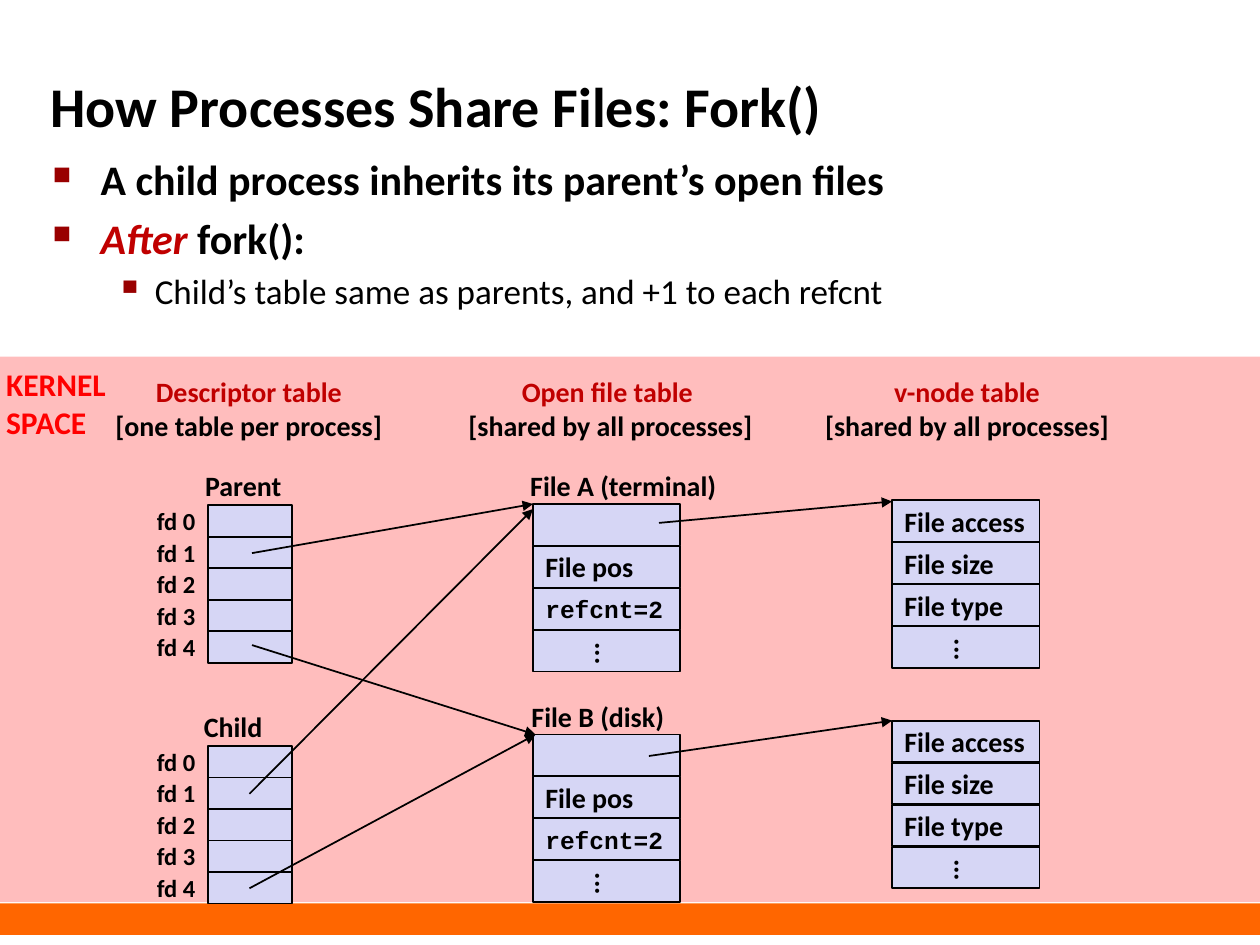
from lxml.etree import SubElement
from pptx import Presentation
from pptx.dml.color import RGBColor
from pptx.enum.shapes import MSO_CONNECTOR, MSO_SHAPE
from pptx.enum.text import MSO_ANCHOR, MSO_AUTO_SIZE, PP_ALIGN
from pptx.oxml.ns import qn
from pptx.util import Inches, Pt

BLACK = RGBColor(0x00, 0x00, 0x00)
ORANGE = RGBColor(0xFF, 0x66, 0x00)
RED = RGBColor(0xFF, 0x00, 0x00)
DARK_RED = RGBColor(0xC0, 0x00, 0x00)
BULLET_RED = RGBColor(0x99, 0x00, 0x00)
LAVENDER = RGBColor(0xD6, 0xD6, 0xF5)

prs = Presentation()
prs.slide_width, prs.slide_height = Inches(10), Inches(7.5)
slide = prs.slides.add_slide(prs.slide_layouts[6])


def add_box(left, top, width, height, fill, outlined=True):
    box = slide.shapes.add_shape(MSO_SHAPE.RECTANGLE, Inches(left), Inches(top),
                                 Inches(width), Inches(height))
    box.shadow.inherit = False
    box.fill.solid()
    box.fill.fore_color.rgb = fill
    if outlined:
        box.line.color.rgb = BLACK
        box.line.width = Pt(1)
    else:
        box.line.fill.background()
    return box


def write(shape, lines, size=16, colors=(BLACK,), font="Calibri",
          align=PP_ALIGN.LEFT, wrap=False, grow=False):
    """Fill a shape with bold, vertically centred lines, one color per line."""
    frame = shape.text_frame
    frame.text = "\n".join(lines)
    frame.word_wrap = wrap
    frame.vertical_anchor = MSO_ANCHOR.MIDDLE
    frame.auto_size = MSO_AUTO_SIZE.SHAPE_TO_FIT_TEXT if grow else MSO_AUTO_SIZE.NONE
    for paragraph, color in zip(frame.paragraphs, colors):
        paragraph.alignment = align
        for run in paragraph.runs:
            run.font.name, run.font.size, run.font.bold = font, Pt(size), True
            run.font.color.rgb = color


# Bands
add_box(0, 7.17, 10, 0.25, ORANGE, outlined=False)
kernel_space = add_box(0, 2.83, 10, 4.33, RED, outlined=False)
kernel_color = kernel_space.fill._xPr.find(".//" + qn("a:srgbClr"))
SubElement(kernel_color, qn("a:alpha"), val="26000")

# Title
title = slide.shapes.add_textbox(Inches(0.3), Inches(0.42), Inches(8.3), Inches(0.83))
write(title, ["How Processes Share Files: Fork()"], size=32, wrap=True)

# Bullets: runs, size, bold, left margin, hanging indent, bullet, bullet size
points = [
    ([("A child process inherits its parent’s open files", BLACK)],
     24, True, 0.38, 0.38, "■", 60),
    ([("After", DARK_RED), (" fork():", BLACK)], 24, True, 0.38, 0.38, "■", 60),
    ([("Child’s table same as parents, and +1 to each refcnt", BLACK)],
     20, False, 0.81, 0.31, "▪", 110),
]
body = slide.shapes.add_textbox(Inches(0.32), Inches(1.17), Inches(9.09), Inches(1.42))
body.text_frame.word_wrap = True
for index, (runs, size, bold, margin, hanging, bullet, bullet_size) in enumerate(points):
    point = body.text_frame.paragraphs[0] if index == 0 else body.text_frame.add_paragraph()
    point.space_before = Pt(size * 0.2)
    for text, color in runs:
        run = point.add_run()
        run.text = text
        run.font.name, run.font.size, run.font.bold = "Calibri", Pt(size), bold
        run.font.italic = color == DARK_RED
        run.font.color.rgb = color
    properties = point._p.get_or_add_pPr()
    properties.set("marL", str(Inches(margin)))
    properties.set("indent", str(-Inches(hanging)))
    bullet_color = SubElement(properties, qn("a:buClr"))
    SubElement(bullet_color, qn("a:srgbClr"), val=str(BULLET_RED))
    SubElement(properties, qn("a:buSzPct"), val=str(bullet_size * 1000))
    SubElement(properties, qn("a:buChar"), char=bullet)

# Table headings
for left, width, heading, scope in [
    (0.8, 2.35, "Descriptor table", "[one table per process]"),
    (3.6, 2.49, "Open file table ", "[shared by all processes]"),
    (6.43, 2.49, "v-node table", "[shared by all processes]"),
]:
    label = slide.shapes.add_textbox(Inches(left), Inches(2.92), Inches(width), Inches(0.64))
    write(label, [heading, scope], colors=(DARK_RED, BLACK),
          align=PP_ALIGN.CENTER, grow=True)

# Descriptor tables
for table_top in (4.01, 5.92):
    for fd in range(5):
        top = table_top + fd * 0.25
        add_box(1.65, top, 0.67, 0.25, LAVENDER)
        fd_label = slide.shapes.add_textbox(Inches(0.98), Inches(top),
                                            Inches(0.67), Inches(0.25))
        write(fd_label, [f"fd {fd}"], size=14, align=PP_ALIGN.RIGHT)

# Open file tables and v-node tables
OPEN_FILE = ["", "File pos", "refcnt=2", "..."]
V_NODE = ["File access", "File size", "File type", "..."]
for left, table_top, entries in [
    (4.23, 4, OPEN_FILE), (4.23, 5.83, OPEN_FILE),
    (7.08, 3.97, V_NODE), (7.08, 5.72, V_NODE),
]:
    for row, entry in enumerate(entries):
        cell = add_box(left, table_top + row / 3, 1.17, 0.33, LAVENDER)
        if entry == "refcnt=2":
            write(cell, [entry], size=14, font="Courier New")
        elif entry:
            write(cell, [entry])
        if entry == "...":
            cell.text_frame._txBody.bodyPr.set("vert", "eaVert")

# Names above the tables
for left, top, width, name in [
    (1.53, 3.67, 0.81, "Parent"),
    (1.52, 5.58, 0.67, "Child"),
    (4.11, 3.67, 1.69, "File A (terminal)"),
    (4.12, 5.5, 1.27, "File B (disk)"),
]:
    table_name = slide.shapes.add_textbox(Inches(left), Inches(top),
                                          Inches(width), Inches(0.37))
    write(table_name, [name], grow=True)

# Pointers between tables
for start_x, start_y, end_x, end_y in [
    (2, 4.39, 4.23, 4),
    (2, 5.12, 4.25, 5.83),
    (1.98, 6.3, 4.23, 4.04),
    (1.98, 7.05, 4.25, 5.83),
    (5.23, 4.15, 7.08, 3.98),
    (5.15, 6, 7.08, 5.72),
]:
    pointer = slide.shapes.add_connector(MSO_CONNECTOR.STRAIGHT, Inches(start_x),
                                         Inches(start_y), Inches(end_x), Inches(end_y))
    pointer.line.color.rgb = BLACK
    pointer.line.width = Pt(1)
    SubElement(pointer.line._get_or_add_ln(), qn("a:tailEnd"), type="triangle")
    SubElement(pointer._element.spPr, qn("a:effectLst"))

kernel_label = slide.shapes.add_textbox(Inches(-0.05), Inches(2.85), Inches(1.03), Inches(0.71))
write(kernel_label, ["KERNEL SPACE"], size=18, colors=(RED,), wrap=True, grow=True)
kernel_label.text_frame.vertical_anchor = MSO_ANCHOR.TOP

prs.save("out.pptx")
